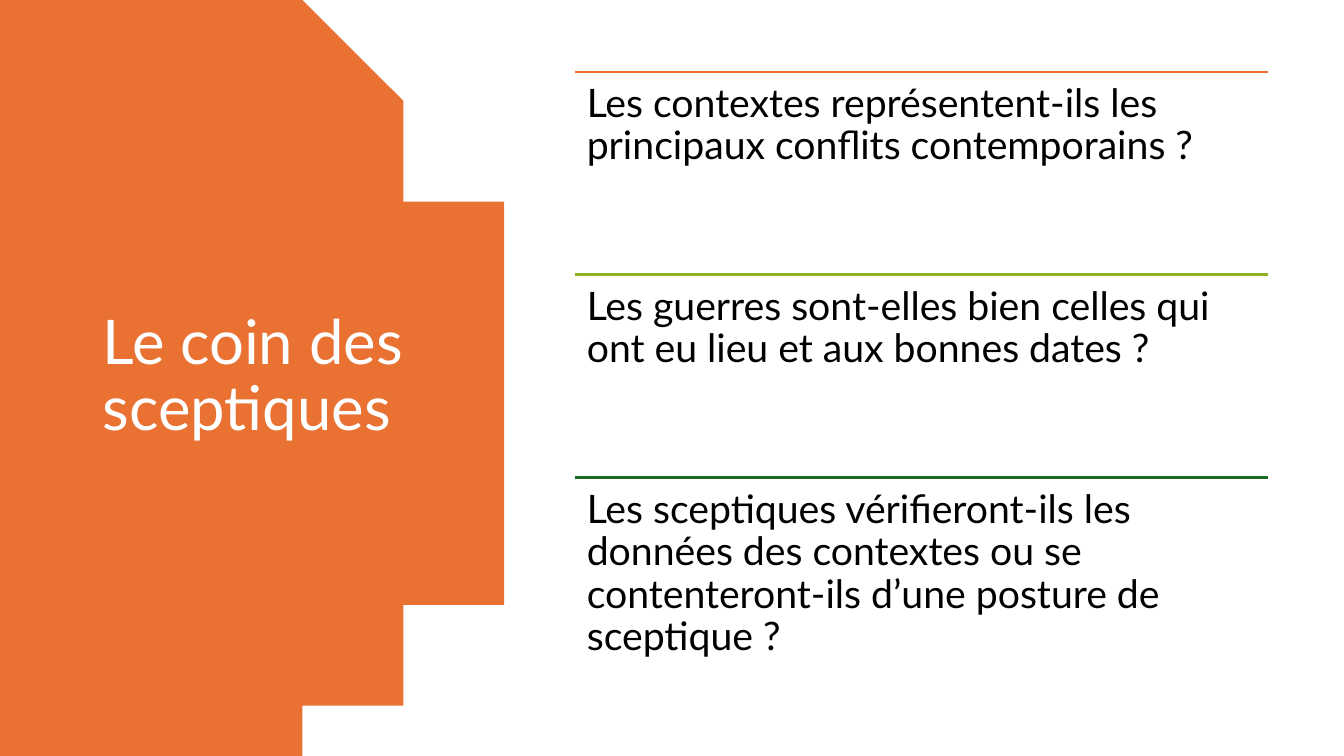
import math

from lxml import etree
from pptx import Presentation
from pptx import util as u
from pptx.dml.color import RGBColor
from pptx.enum import shapes, text
from pptx.oxml.ns import qn

FONT = "Lato"
COLORS = {
    "orange": "E97132",
    "lime": "8EB21E",
    "green": "196B24",
    "white": "FFFFFF",
    "black": "000000",
}
QUESTIONS = [
    ("orange", "Les contextes représentent-ils les principaux conflits contemporains ?"),
    ("lime", "Les guerres sont-elles bien celles qui ont eu lieu et aux bonnes dates ?"),
    ("green", "Les sceptiques vérifieront-ils les données des contextes "
              "ou se contenteront-ils d’une posture de sceptique ?"),
]


def color(name):
    return RGBColor.from_string(COLORS[name])


def add_text(page, left, top, width, height, words, size, ink, inset, anchor):
    box = page.shapes.add_textbox(*map(u.Inches, (left, top, width, height)))
    frame = box.text_frame
    frame.word_wrap = True
    frame.vertical_anchor = anchor
    frame.margin_left = frame.margin_right = u.Inches(inset)
    frame.margin_top = frame.margin_bottom = u.Inches(inset)
    para = frame.paragraphs[0]
    para.text = words
    para.line_spacing = 0.9
    para.font.name = FONT
    para.font.size = u.Pt(size)
    para.font.color.rgb = color(ink)


def add_title_panel(page, left, top, width, height):
    """Panel whose right edge is an arc reaching the box's right side."""
    chord = 2.83
    half = height / 2
    bulge = width - chord
    radius = (bulge ** 2 + half ** 2) / (2 * bulge)
    center_x, center_y = left + width - radius, top + half
    reach = math.asin(half / radius)
    steps = 120
    angles = [reach * (2 * step / steps - 1) for step in range(steps + 1)]
    arc = [(center_x + radius * math.cos(angle), center_y + radius * math.sin(angle))
           for angle in angles]

    builder = page.shapes.build_freeform(left, top, scale=u.Inches(1))
    builder.add_line_segments(arc + [(left, top + height)], close=True)
    panel = builder.convert_to_shape()
    panel.shadow.inherit = False
    panel.fill.solid()
    panel.fill.fore_color.rgb = color("orange")
    panel.line.fill.background()

    # Title
    add_text(page, left + 0.92, top + 0.7, 3.23, 6.09, "Le coin des sceptiques",
             44, "white", 0.1, text.MSO_ANCHOR.MIDDLE)


def add_questions(page, left, top, width, height):
    """Equal rows, each a coloured rule with a question below it."""
    row_height = height / len(QUESTIONS)
    for row, (ink, question) in enumerate(QUESTIONS):
        row_top = top + row * row_height
        rule = page.shapes.add_connector(
            shapes.MSO_CONNECTOR.STRAIGHT,
            *map(u.Inches, (left, row_top, left + width, row_top)))
        rule.line.color.rgb = color(ink)
        rule.line.width = u.Pt(1.5)
        etree.SubElement(rule.element.spPr, qn("a:effectLst"))
        add_text(page, left, row_top, width, row_height, question,
                 28, "black", 0.12, text.MSO_ANCHOR.TOP)


def main():
    deck = Presentation()
    deck.slide_width, deck.slide_height = u.Inches(13.33), u.Inches(7.5)
    page = deck.slides.add_slide(deck.slide_layouts[6])
    add_title_panel(page, 0, 0, 4.93, 7.5)
    add_questions(page, 5.7, 0.71, 6.88, 6.04)
    deck.save("out.pptx")


if __name__ == "__main__":
    main()
